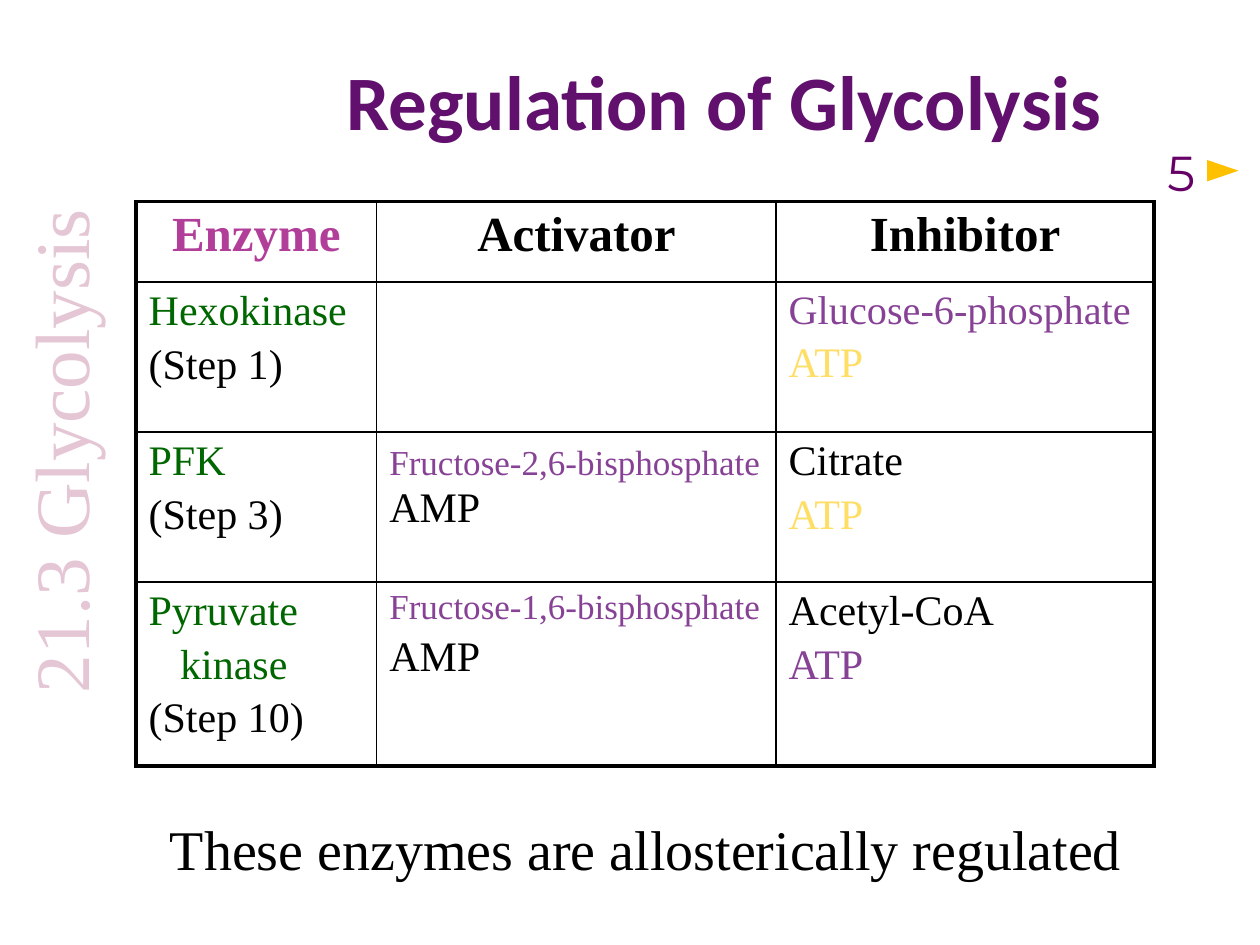
"""Build the slide on the allosteric regulation of glycolysis."""
import pptx
import pptx.util
import pptx.dml.color
import pptx.enum.text
import pptx.enum.shapes
import pptx.oxml

Inches, Pt = pptx.util.Inches, pptx.util.Pt
ALIGN = pptx.enum.text.PP_ALIGN
MIDDLE = pptx.enum.text.MSO_ANCHOR.MIDDLE
SERIF = "Times New Roman"
COLORS = {"title": "61116D", "pink": "B13F9A", "black": "000000", "green": "006600",
          "purple": "874296", "yellow": "FFDE66", "side": "E5C6D4",
          "number": "660066", "gold": "FFC000"}


def style(par, size, color, face=SERIF, bold=False, align=ALIGN.CENTER):
    par.alignment = align
    font = par.font
    font.size, font.name, font.bold = Pt(size), face, bold
    font.color.rgb = pptx.dml.color.RGBColor.from_string(COLORS[color])


def edge(cell, side, width):
    line = pptx.oxml.parse_xml(
        '<a:%s xmlns:a="http://schemas.openxmlformats.org/drawingml/2006/main" w="%d">'
        '<a:solidFill><a:srgbClr val="%s"/></a:solidFill></a:%s>'
        % (side, Pt(width), COLORS["black"], side))
    cell._tc.get_or_add_tcPr().append(line)


deck = pptx.Presentation()
deck.slide_width, deck.slide_height = Inches(10), Inches(7.5)
slide = deck.slides.add_slide(deck.slide_layouts[5])

title = slide.shapes.title
title.left, title.top = Inches(1.5), Inches(0.17)
title.width, title.height = Inches(8.5), Inches(1.25)
title.text_frame.text = "Regulation of Glycolysis"
title.text_frame.vertical_anchor = MIDDLE
style(title.text_frame.paragraphs[0], 44, "title", "Calibri", True)

rows = [
    [[("Enzyme", 28, "pink")], [("Activator", 28, "black")], [("Inhibitor", 28, "black")]],
    [[("Hexokinase", 24, "green"), ("(Step 1)", 24, "black")],
     [],
     [("Glucose-6-phosphate", 23, "purple"), ("ATP", 24, "yellow")]],
    [[("PFK", 24, "green"), ("(Step 3)", 24, "black")],
     [("Fructose-2,6-bisphosphate", 20, "purple")],
     [("Citrate", 24, "black"), ("ATP", 24, "yellow")]],
    [[("Pyruvate", 24, "green"), ("kinase", 24, "green"), ("(Step 10)", 24, "black")],
     [("Fructose-1,6-bisphosphate", 20, "purple"), ("AMP", 24, "black")],
     [("Acetyl-CoA", 24, "black"), ("ATP", 24, "purple")]],
]
widths, heights = [1.91, 3.17, 3], [0.64, 1.19, 1.19, 1.46]
table = slide.shapes.add_table(4, 3, Inches(1.08), Inches(1.6), Inches(sum(widths)),
                               Inches(sum(heights))).table
table.first_row = table.horz_banding = False
for col, width in zip(table.columns, widths):
    col.width = Inches(width)
for row, height in zip(table.rows, heights):
    row.height = Inches(height)

for r, row in enumerate(rows):
    for c, lines in enumerate(row):
        cell = table.cell(r, c)
        frame = cell.text_frame
        for i, (text, size, color) in enumerate(lines):
            par = frame.paragraphs[0] if i == 0 else frame.add_paragraph()
            par.add_run().text = text
            style(par, size, color, bold=r == 0, align=ALIGN.CENTER if r == 0 else ALIGN.LEFT)
            par.space_before = Pt(4)
            if text == "kinase":
                par._p.get_or_add_pPr().set("marL", str(Inches(0.25)))
        outer = {"lnL": c == 0, "lnR": c == 2, "lnT": r == 0, "lnB": r == 3}
        for side, thick in outer.items():
            edge(cell, side, 2.25 if thick else 1)
        cell.fill.background()

amp = table.cell(2, 1).text_frame.paragraphs[0].add_run()
amp.text = " AMP"
amp.font.size = Pt(24)
amp.font.color.rgb = pptx.dml.color.RGBColor.from_string(COLORS["black"])

labels = [
    ("These enzymes are allosterically regulated", 1.25, 6.42, 7.76, 0.63, 0, 32, "black", SERIF),
    ("21.3 Glycolysis", -3.12, 3.12, 7.17, 0.92, 270, 44, "side", SERIF),
    ("5", 9, 1.08, 0.75, 0.57, 0, 28, "number", "Montserrat"),
]
for text, x, y, w, h, turn, size, color, face in labels:
    box = slide.shapes.add_textbox(Inches(x), Inches(y), Inches(w), Inches(h))
    box.rotation = turn
    box.text_frame.word_wrap = True
    box.text_frame.vertical_anchor = MIDDLE
    box.text_frame.text = text
    style(box.text_frame.paragraphs[0], size, color, face)

arrow = slide.shapes.add_shape(pptx.enum.shapes.MSO_SHAPE.ISOSCELES_TRIANGLE,
                               Inches(9.62), Inches(1.23), Inches(0.17), Inches(0.25))
arrow.rotation = 90
arrow.shadow.inherit = False
arrow.fill.solid()
arrow.fill.fore_color.rgb = pptx.dml.color.RGBColor.from_string(COLORS["gold"])
arrow.line.fill.background()

deck.save("out.pptx")
